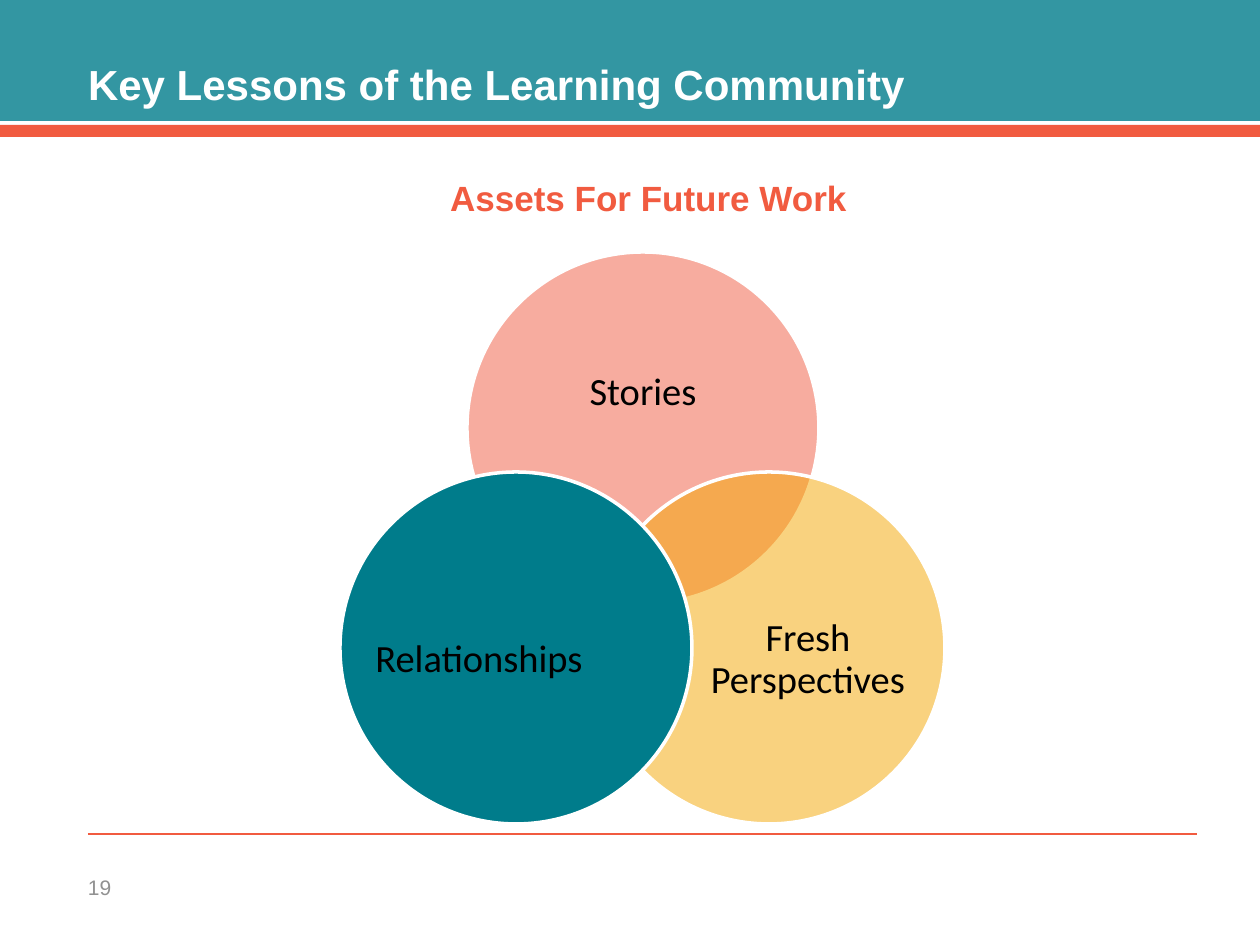
import pptx
import pptx.util
import pptx.dml.color
import pptx.enum.shapes
import pptx.enum.text
import pptx.oxml
import pptx.oxml.ns

RGB = pptx.dml.color.RGBColor
SHAPE = pptx.enum.shapes.MSO_SHAPE
ALIGN = pptx.enum.text.PP_ALIGN
ANCHOR = pptx.enum.text.MSO_ANCHOR

TEAL = RGB(0x00, 0x7C, 0x8B)
CORAL = RGB(0xF1, 0x5B, 0x40)
ROSE = RGB(0xF0, 0x5B, 0x40)
GOLD = RGB(0xF4, 0xA7, 0x00)
GREY = RGB(0x91, 0x91, 0x91)
WHITE = RGB(0xFF, 0xFF, 0xFF)
BLACK = RGB(0x00, 0x00, 0x00)

SCALE = 914400 / 126  # EMU in one px


def emu(*sizes):
    return [round(size * SCALE) for size in sizes]


class Page:
    """Holds the text style and the current slide; lengths are in px."""

    head_font = "Arial"
    label_font = "Calibri"

    def __init__(self, slide):
        self.slide = slide
        self.shapes = slide.shapes

    def shape(self, kind, box, fill, alpha=100, edge=None):
        """Draw a filled shape; alpha is its opacity in percent."""
        item = self.shapes.add_shape(kind, *emu(*box))
        item.shadow.inherit = False
        item.fill.solid()
        item.fill.fore_color.rgb = fill
        if alpha < 100:
            color = item._element.spPr.find(
                "/".join(map(pptx.oxml.ns.qn, ("a:solidFill", "a:srgbClr"))))
            color.append(pptx.oxml.parse_xml(
                f'<a:alpha {pptx.oxml.ns.nsdecls("a")} val="{alpha * 1000}"/>'))
        if edge is None:
            item.line.fill.background()
        else:
            item.line.color.rgb = edge
            item.line.width = pptx.util.Pt(2)

    def rule(self, left, right, top, color):
        line = self.shapes.add_connector(
            pptx.enum.shapes.MSO_CONNECTOR.STRAIGHT,
            *emu(left, top, right, top))
        line.line.color.rgb = color
        line.line.width = pptx.util.Pt(1)
        line._element.spPr.append(pptx.oxml.parse_xml(
            f'<a:effectLst {pptx.oxml.ns.nsdecls("a")}/>'))

    def title(self, text, box, size, color):
        item = self.shapes.title
        item.left, item.top, item.width, item.height = emu(*box)
        self.style(item, text, size, color, self.head_font, bold=True)

    def text(self, text, box, size, color, font=head_font, **style):
        item = self.shapes.add_textbox(*emu(*box))
        self.style(item, text, size, color, font, **style)

    def style(self, item, text, size, color, font, bold=False,
              align=ALIGN.LEFT, anchor=ANCHOR.MIDDLE, space=1.0):
        """Set the text of a shape and format it."""
        frame = item.text_frame
        frame.text = text
        frame.word_wrap = True
        frame.auto_size = pptx.enum.text.MSO_AUTO_SIZE.NONE
        frame.vertical_anchor = anchor
        frame.margin_left = frame.margin_right = 0
        frame.margin_top = frame.margin_bottom = 0
        para = frame.paragraphs[0]
        para.alignment = align
        para.line_spacing = space
        para.space_before = pptx.util.Pt(0)
        face = para.runs[0].font
        face.name = font
        face.size = pptx.util.Pt(size)
        face.bold = bold
        face.color.rgb = color

    def lobe(self, name, spot, fill, alpha, label):
        """Draw one circle of the Venn diagram and its label box."""
        self.shape(SHAPE.OVAL, (*spot, 352, 352), fill, alpha, WHITE)
        self.text(name, label, 22, BLACK, self.label_font,
                  align=ALIGN.CENTER, space=0.9)


def main():
    deck = pptx.Presentation()
    deck.slide_width, deck.slide_height = emu(1260, 945)
    page = Page(deck.slides.add_slide(deck.slide_layouts.get_by_name("Title Only")))

    page.shape(SHAPE.RECTANGLE, (0, 0, 1260, 121), TEAL, 80)
    page.shape(SHAPE.RECTANGLE, (0, 125, 1260, 12), CORAL)
    page.rule(88, 1197, 834, CORAL)

    # Bring the title in front of the band it stands on.
    title = page.shapes.title._element
    title.getparent().append(title)
    page.title("Key Lessons of the Learning Community",
               (88, 54, 1109, 60), 24, WHITE)
    page.text("19", (88, 862, 63, 50), 12, GREY)

    lobes = [
        ("Stories", (467, 252), ROSE, 50, (514, 314, 258, 158)),
        ("Fresh Perspectives", (593, 472), GOLD, 50, (702, 563, 212, 194)),
        ("Relationships", (340, 472), TEAL, 100, (373, 563, 212, 194)),
    ]
    for lobe in lobes:
        page.lobe(*lobe)

    page.text("Assets For Future Work", (314, 176, 669, 70), 20, CORAL,
              bold=True, align=ALIGN.CENTER, anchor=ANCHOR.TOP)
    deck.save("out.pptx")


if __name__ == "__main__":
    main()
